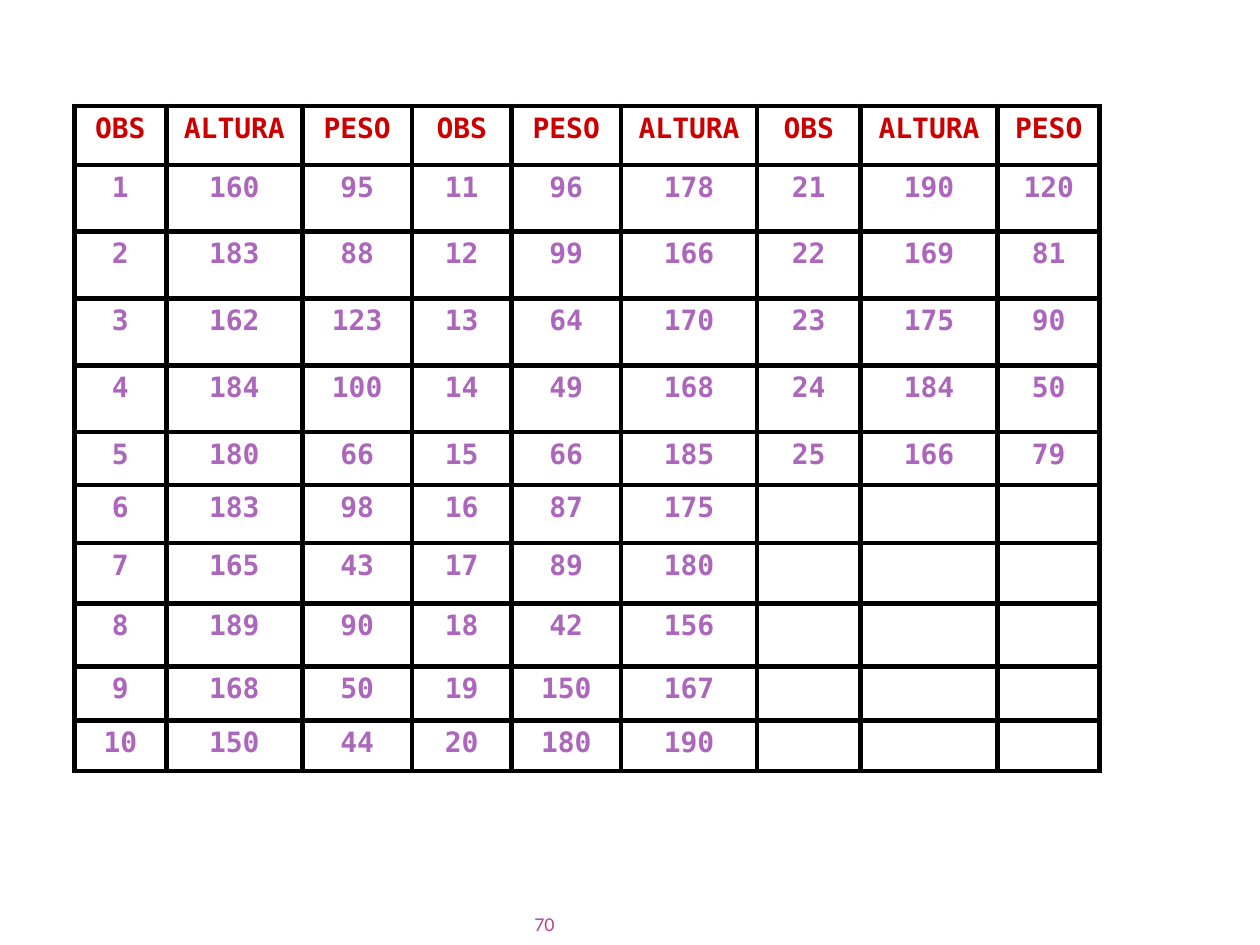
"""Build a slide with a table of heights and weights for 25 observations."""
from lxml.etree import SubElement
from pptx import Presentation
from pptx.dml.color import RGBColor
from pptx.enum.text import MSO_ANCHOR, PP_ALIGN
from pptx.oxml.ns import qn
from pptx.util import Inches, Pt


def write(frame, text, color, size, font, align, bold=False):
    para = frame.paragraphs[0]
    para.alignment = align
    span = para.add_run()
    span.text = text
    span.font.size = Pt(size)
    span.font.name = font
    span.font.bold = bold
    span.font.color.rgb = RGBColor.from_string(color)


def add_borders(cell, color, width):
    properties = cell._tc.get_or_add_tcPr()
    for side in ("lnL", "lnR", "lnT", "lnB"):
        line = SubElement(properties, qn(f"a:{side}"), w=str(Pt(width)))
        fill = SubElement(line, qn("a:solidFill"))
        SubElement(fill, qn("a:srgbClr"), val=color)


rows = [
    ["OBS", "ALTURA", "PESO", "OBS", "PESO", "ALTURA", "OBS", "ALTURA", "PESO"],
    [1, 160, 95, 11, 96, 178, 21, 190, 120],
    [2, 183, 88, 12, 99, 166, 22, 169, 81],
    [3, 162, 123, 13, 64, 170, 23, 175, 90],
    [4, 184, 100, 14, 49, 168, 24, 184, 50],
    [5, 180, 66, 15, 66, 185, 25, 166, 79],
    [6, 183, 98, 16, 87, 175],
    [7, 165, 43, 17, 89, 180],
    [8, 189, 90, 18, 42, 156],
    [9, 168, 50, 19, 150, 167],
    [10, 150, 44, 20, 180, 190],
]
widths = [0.73, 1.08, 0.87, 0.79, 0.87, 1.08, 0.82, 1.09, 0.81]
heights = [0.47, 0.53, 0.53, 0.53, 0.53, 0.42, 0.46, 0.48, 0.5, 0.43, 0.4]

deck = Presentation()
deck.slide_width = Inches(10)
deck.slide_height = Inches(7.5)
page = deck.slides.add_slide(deck.slide_layouts[6])

table = page.shapes.add_table(
    len(rows), len(widths), Inches(0.59), Inches(0.84),
    Inches(sum(widths)), Inches(sum(heights)),
).table
table.first_row = False
table.horz_banding = False
for column, width in zip(table.columns, widths):
    column.width = Inches(width)
for row, height in zip(table.rows, heights):
    row.height = Inches(height)

for row_index, values in enumerate(rows):
    color = "AC66BB" if row_index else "CC0000"
    for cell in table.rows[row_index].cells:
        add_borders(cell, color="000000", width=3)
        cell.fill.background()
        cell.margin_bottom = Inches(0.03)
    for column_index, value in enumerate(values):
        write(table.cell(row_index, column_index).text_frame, str(value),
              color=color, size=16, font="DejaVu Sans Mono",
              align=PP_ALIGN.CENTER, bold=True)

box = page.shapes.add_textbox(Inches(0.5), Inches(7.17), Inches(4), Inches(0.25))
frame = box.text_frame
frame.word_wrap = True
frame.vertical_anchor = MSO_ANCHOR.BOTTOM
frame.margin_top = frame.margin_bottom = Inches(0)
write(frame, "70", color="B13F9A", size=10, font="Lato", align=PP_ALIGN.RIGHT)

deck.save("out.pptx")
